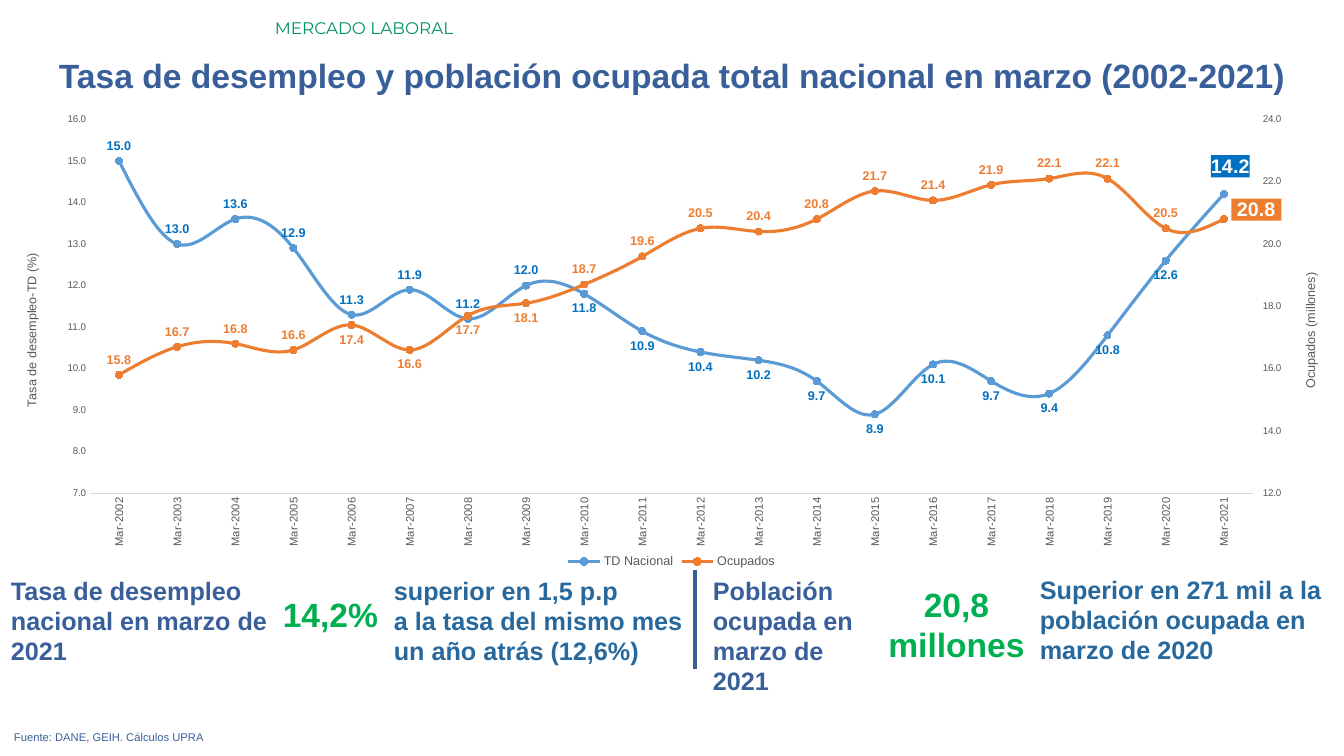
from copy import deepcopy

from pptx import Presentation
from pptx.chart.axis import CategoryAxis, ValueAxis
from pptx.chart.data import CategoryChartData
from pptx.dml.color import RGBColor
from pptx.enum.chart import XL_CHART_TYPE as ChartType
from pptx.enum.chart import XL_LABEL_POSITION as LabelPosition
from pptx.enum.chart import XL_LEGEND_POSITION as LegendPosition
from pptx.enum.chart import XL_MARKER_STYLE as MarkerStyle
from pptx.enum.chart import XL_TICK_MARK as TickMark
from pptx.enum.shapes import MSO_CONNECTOR as Connector
from pptx.enum.text import MSO_ANCHOR as Anchor
from pptx.enum.text import MSO_AUTO_SIZE as AutoSize
from pptx.enum.text import PP_ALIGN as Align
from pptx.oxml import parse_xml
from pptx.oxml.ns import nsdecls
from pptx.util import Pt

PX = 914400 / 100.8
COLORS = {
    "header": "009267", "navy": "395F9B", "teal": "27689D", "figure": "00B050",
    "grey": "595959", "axis": "D9D9D9", "white": "FFFFFF",
    "rate": "5B9BD5", "rate label": "0070C0", "employed": "ED7D31",
}


def style_font(font, size, color, bold=False, name="Arial"):
    font.size, font.bold, font.name = Pt(size), bold, name
    font.color.rgb = RGBColor.from_string(COLORS[color])


def write_text(frame, text, align=None, **font_format):
    """Fill a text frame, one paragraph per line of text."""
    for index, line in enumerate(text.split("\n")):
        para = frame.add_paragraph() if index else frame.paragraphs[0]
        span = para.add_run()
        span.text = line
        para.alignment = align
        style_font(span.font, **font_format)


deck = Presentation()
deck.slide_width, deck.slide_height = round(1344 * PX), round(756 * PX)
page = deck.slides.add_slide(deck.slide_layouts[5])

# Title
title = page.shapes.title
title.left, title.top, title.width, title.height = (
    round(n * PX) for n in (0, 50, 1344, 50))
title.text_frame.word_wrap = True
title.text_frame.auto_size = AutoSize.NONE
title.text_frame.vertical_anchor = Anchor.TOP
write_text(title.text_frame,
           "Tasa de desempleo y población ocupada total nacional en marzo (2002-2021)",
           align=Align.CENTER, size=24, color="navy", bold=True)

# Header, key figures and source
label_format = {"size": 18, "color": "navy", "bold": True}
detail_format = {"size": 18, "color": "teal", "bold": True}
figure_format = {"size": 24, "color": "figure", "bold": True}
texts = [
    ((265, 13, 1079, 30), "MERCADO LABORAL",
     {"size": 12, "color": "header", "name": "Montserrat"}),
    ((1, 570, 286, 102), "Tasa de desempleo nacional en marzo de 2021", label_format),
    ((265, 589, 123, 50), "14,2%", {"align": Align.RIGHT, **figure_format}),
    ((384, 570, 309, 102),
     "superior en 1,5 p.p\na la tasa del mismo mes un año atrás (12,6%)", detail_format),
    ((703, 570, 184, 132), "Población ocupada en marzo de 2021", label_format),
    ((876, 579, 161, 92), "20,8 millones", {"align": Align.CENTER, **figure_format}),
    ((1030, 569, 314, 102),
     "Superior en 271 mil a la población ocupada en marzo de 2020", detail_format),
    ((4, 725, 1301, 24), "Fuente: DANE, GEIH. Cálculos UPRA",
     {"align": Align.JUSTIFY, "size": 8, "color": "navy"}),
]
for place, text, text_format in texts:
    box = page.shapes.add_textbox(*(round(n * PX) for n in place))
    box.text_frame.word_wrap = True
    write_text(box.text_frame, text, **text_format)

divider = page.shapes.add_connector(
    Connector.STRAIGHT, *(round(n * PX) for n in (695, 570, 695, 669)))
divider.line.color.rgb = RGBColor.from_string(COLORS["navy"])
divider.line.width = Pt(2.25)
divider._element.spPr.append(parse_xml(f"<a:effectLst {nsdecls('a')}/>"))

# Chart
data = CategoryChartData()
data.categories = [f"Mar-{year}" for year in range(2002, 2022)]
data.add_series("TD Nacional", [
    15, 13, 13.6, 12.9, 11.3, 11.9, 11.2, 12, 11.8, 10.9,
    10.4, 10.2, 9.7, 8.9, 10.1, 9.7, 9.4, 10.8, 12.6, 14.2])
data.add_series("Ocupados", [
    15.8, 16.7, 16.8, 16.6, 17.4, 16.6, 17.7, 18.1, 18.7, 19.6,
    20.5, 20.4, 20.8, 21.7, 21.4, 21.9, 22.1, 22.1, 20.5, 20.8])
chart = page.shapes.add_chart(
    ChartType.LINE_MARKERS, *(round(n * PX) for n in (21, 102, 1301, 471)), data).chart
style_font(chart.font, 10, "grey")
chart.has_title = False
chart.has_legend = True
chart.legend.position = LegendPosition.BOTTOM
chart.legend.include_in_layout = False
style_font(chart.legend.font, 9, "grey")

# Second line group on its own pair of axes
plot_area = chart._chartSpace.chart.plotArea
left_lines = plot_area.xpath("c:lineChart")[0]
right_lines = deepcopy(left_lines)
left_lines.remove(left_lines.xpath("c:ser")[1])
right_lines.remove(right_lines.xpath("c:ser")[0])
left_lines.addnext(right_lines)
left_axis, year_axis = chart.value_axis, chart.category_axis
right_axis = ValueAxis(deepcopy(left_axis._element))
hidden_axis = CategoryAxis(deepcopy(year_axis._element))
left_axis._element.addnext(right_axis._element)
right_axis._element.addnext(hidden_axis._element)
for axis, own_id, cross_id in ((hidden_axis, "101", "102"), (right_axis, "102", "101")):
    axis._element.xpath("c:axId")[0].set("val", own_id)
    axis._element.xpath("c:crossAx")[0].set("val", cross_id)
for reference, axis_id in zip(right_lines.xpath("c:axId"), ("101", "102")):
    reference.set("val", axis_id)
right_axis._element.xpath("c:axPos")[0].set("val", "r")
right_axis._element.xpath("c:crosses")[0].set("val", "max")
hidden_axis.visible = False

for axis, name, low, high, step, tick in (
        (left_axis, "Tasa de desempleo-TD (%)", 7, 16, 1, TickMark.NONE),
        (right_axis, "Ocupados (millones)", 12, 24, 2, TickMark.OUTSIDE)):
    axis.minimum_scale, axis.maximum_scale, axis.major_unit = low, high, step
    axis.has_major_gridlines = False
    axis.major_tick_mark, axis.minor_tick_mark = tick, TickMark.NONE
    axis.format.line.fill.background()
    axis.tick_labels.number_format = "0.0"
    axis.tick_labels.number_format_is_linked = False
    style_font(axis.tick_labels.font, 7, "grey")
    frame = axis.axis_title.text_frame
    write_text(frame, name, size=9, color="grey")
    frame._txBody.bodyPr.set("rot", "-5400000")
    frame._txBody.bodyPr.set("vert", "horz")

year_axis.major_tick_mark = year_axis.minor_tick_mark = TickMark.NONE
year_axis.format.line.color.rgb = RGBColor.from_string(COLORS["axis"])
year_axis.format.line.width = Pt(0.75)
style_font(year_axis.tick_labels.font, 8, "grey")
year_axis._element.xpath("c:txPr/a:bodyPr")[0].set("rot", "-5400000")

for layout in plot_area.xpath("c:layout"):
    plot_area.remove(layout)
plot_area.insert(0, parse_xml(
    f'<c:layout {nsdecls("c")}><c:manualLayout><c:layoutTarget val="inner"/>'
    '<c:xMode val="edge"/><c:yMode val="edge"/><c:x val="0.053"/><c:y val="0.037"/>'
    '<c:w val="0.894"/><c:h val="0.794"/></c:manualLayout></c:layout>'))

# Lines and their labels; the last point of each is highlighted
LAST = 19
series_styles = [
    ("rate", "rate label", "#,##0.0", range(8, LAST), LabelPosition.ABOVE, 0.005, -0.02),
    ("employed", "employed", "_-* #,##0.0_-", range(4, 8), LabelPosition.RIGHT, 0, -0.02),
]
for plot, style in zip(chart.plots, series_styles):
    color, label_color, number_format, below, last_position, shift_x, shift_y = style
    plot.vary_by_categories = False
    series = plot.series[0]
    series.smooth = True
    series.format.line.width = Pt(2.25)
    series.marker.style, series.marker.size = MarkerStyle.CIRCLE, 5
    series.marker.format.fill.solid()
    for ink in (series.format.line.color, series.marker.format.line.color,
                series.marker.format.fill.fore_color):
        ink.rgb = RGBColor.from_string(COLORS[color])

    labels = series.data_labels
    labels.show_value = True
    labels.position = LabelPosition.ABOVE
    labels.number_format = number_format
    labels.number_format_is_linked = False
    style_font(labels.font, 9, label_color, bold=True)
    for index in (*below, LAST):
        label = series.points[index].data_label
        is_last = index == LAST
        style_font(label.font, 14 if is_last else 9,
                   "white" if is_last else label_color, bold=True)
        label.position = last_position if is_last else LabelPosition.BELOW
        parts = [f'<c:numFmt {nsdecls("c")} formatCode="{number_format}" sourceLinked="0"/>']
        if is_last:
            parts.insert(0, f'<c:layout {nsdecls("c")}><c:manualLayout><c:x val="{shift_x}"/>'
                            f'<c:y val="{shift_y}"/></c:manualLayout></c:layout>')
            parts.append(f'<c:spPr {nsdecls("c", "a")}><a:solidFill><a:srgbClr '
                         f'val="{COLORS[label_color]}"/></a:solidFill></c:spPr>')
        element = labels._element.xpath(f'c:dLbl[c:idx/@val="{index}"]')[0]
        for old in element.xpath("c:spPr") if is_last else ():
            element.remove(old)
        for place, part in enumerate(parts, start=1):
            element.insert(place, parse_xml(part))

deck.save("out.pptx")
